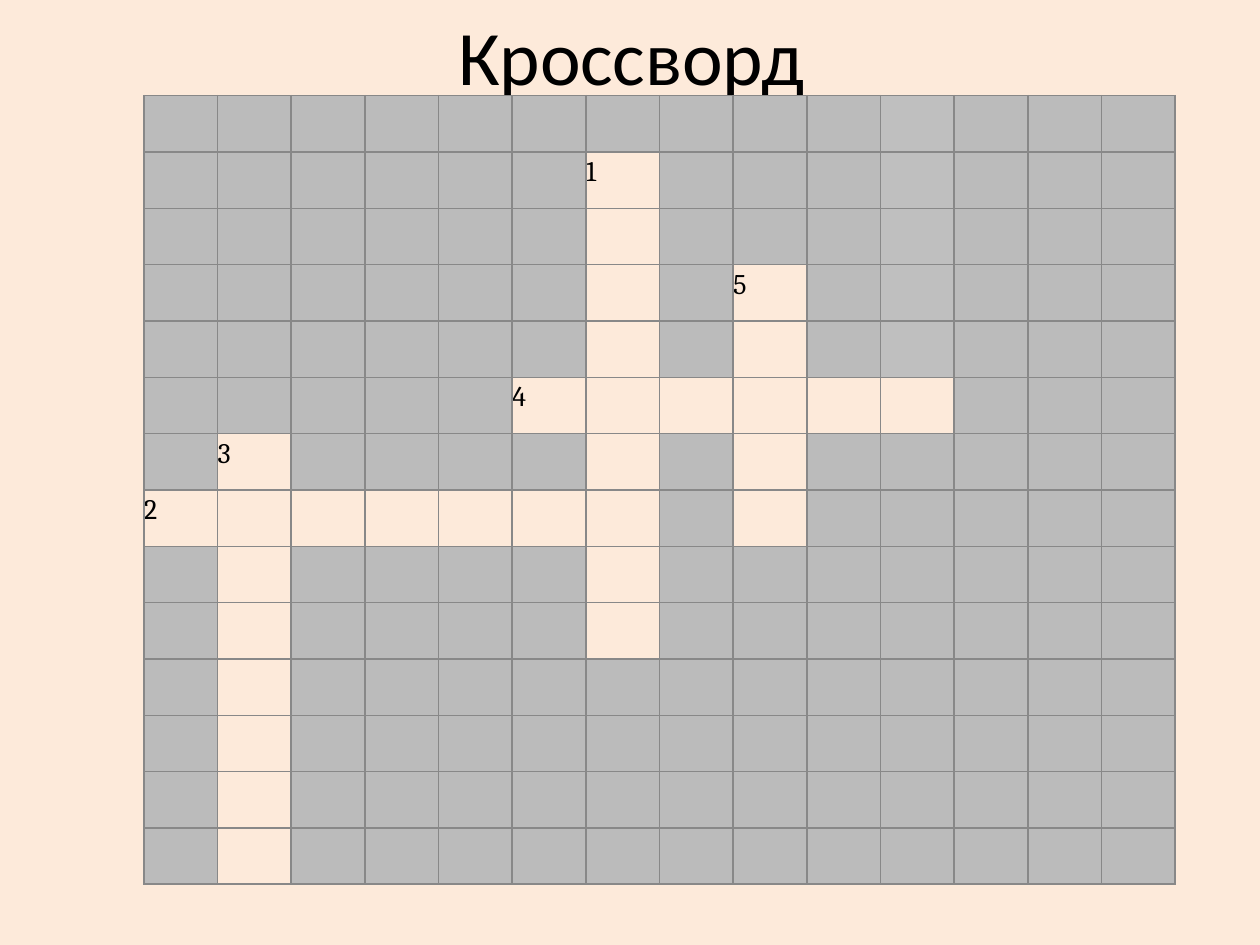
"""Build a crossword slide with a numbered 14 by 14 grid."""
from pptx import Presentation, util as u
from pptx.dml.color import RGBColor
from pptx.enum import text
from pptx.oxml import parse_xml
from pptx.oxml.ns import nsdecls

TITLE = "Кроссворд"
SIZE = 14
WORDS = [
    ("1", 1, 6, 9, "down"),
    ("2", 7, 0, 7, "across"),
    ("3", 6, 1, 8, "down"),
    ("4", 5, 5, 6, "across"),
    ("5", 3, 8, 5, "down"),
]
PALE = {(row, 10) for row in range(5)}
BOX = (2.9, 1.93, 20.8, 15.9)
HEAD = (1.3, -0.48, 22.86, 3.18)
THEME = {
    "page": "FDEADA", "block": "BBBBBB", "pale": "BFBFBF",
    "line": "888888", "ink": "000000",
    "head": ("Calibri", 44), "mark": ("Cambria", 28), "border": 1,
}


def color(name):
    return RGBColor.from_string(THEME[name])


def style(run, kind):
    run.font.name, size = THEME[kind]
    run.font.size = u.Pt(size)
    run.font.color.rgb = color("ink")


def border(cell):
    props = cell._tc.get_or_add_tcPr()
    for side in "LRTB":
        props.append(parse_xml(
            f'<a:ln{side} {nsdecls("a")} w="{u.Pt(THEME["border"])}"><a:solidFill>'
            f'<a:srgbClr val="{THEME["line"]}"/></a:solidFill></a:ln{side}>'))


def number(cell, mark):
    cell.margin_left = cell.margin_right = cell.margin_top = cell.margin_bottom = 0
    cell.vertical_anchor = text.MSO_ANCHOR.MIDDLE
    para = cell.text_frame.paragraphs[0]
    para.text = mark
    para.space_after = u.Pt(6)
    run = para.runs[0]
    style(run, "mark")
    run.font._element.set("baseline", "30000")


def layout():
    spots, marks = set(), {}
    for mark, row, col, count, way in WORDS:
        marks[row, col] = mark
        down = way == "down"
        spots |= {(row + i * down, col + i * (not down)) for i in range(count)}
    return spots, marks


def add_title(slide):
    title = slide.shapes.title
    title.left, title.top, title.width, title.height = map(u.Cm, HEAD)
    frame = title.text_frame
    frame.text = TITLE
    frame.vertical_anchor = text.MSO_ANCHOR.MIDDLE
    para = frame.paragraphs[0]
    para.alignment = text.PP_ALIGN.CENTER
    style(para.runs[0], "head")


def add_grid(slide):
    grid = slide.shapes.add_table(SIZE, SIZE, *map(u.Cm, BOX)).table
    grid.first_row = grid.horz_banding = False
    spots, marks = layout()
    for row in range(SIZE):
        for col in range(SIZE):
            cell, spot = grid.cell(row, col), (row, col)
            border(cell)
            if spot in spots:
                cell.fill.background()
            else:
                cell.fill.solid()
                cell.fill.fore_color.rgb = color("pale" if spot in PALE else "block")
            if spot in marks:
                number(cell, marks[spot])


def main():
    deck = Presentation()
    deck.slide_width, deck.slide_height = u.Cm(25.4), u.Cm(19.05)
    slide = deck.slides.add_slide(deck.slide_layouts[5])
    slide.background.fill.solid()
    slide.background.fill.fore_color.rgb = color("page")
    add_title(slide)
    add_grid(slide)
    deck.save("out.pptx")


if __name__ == "__main__":
    main()
